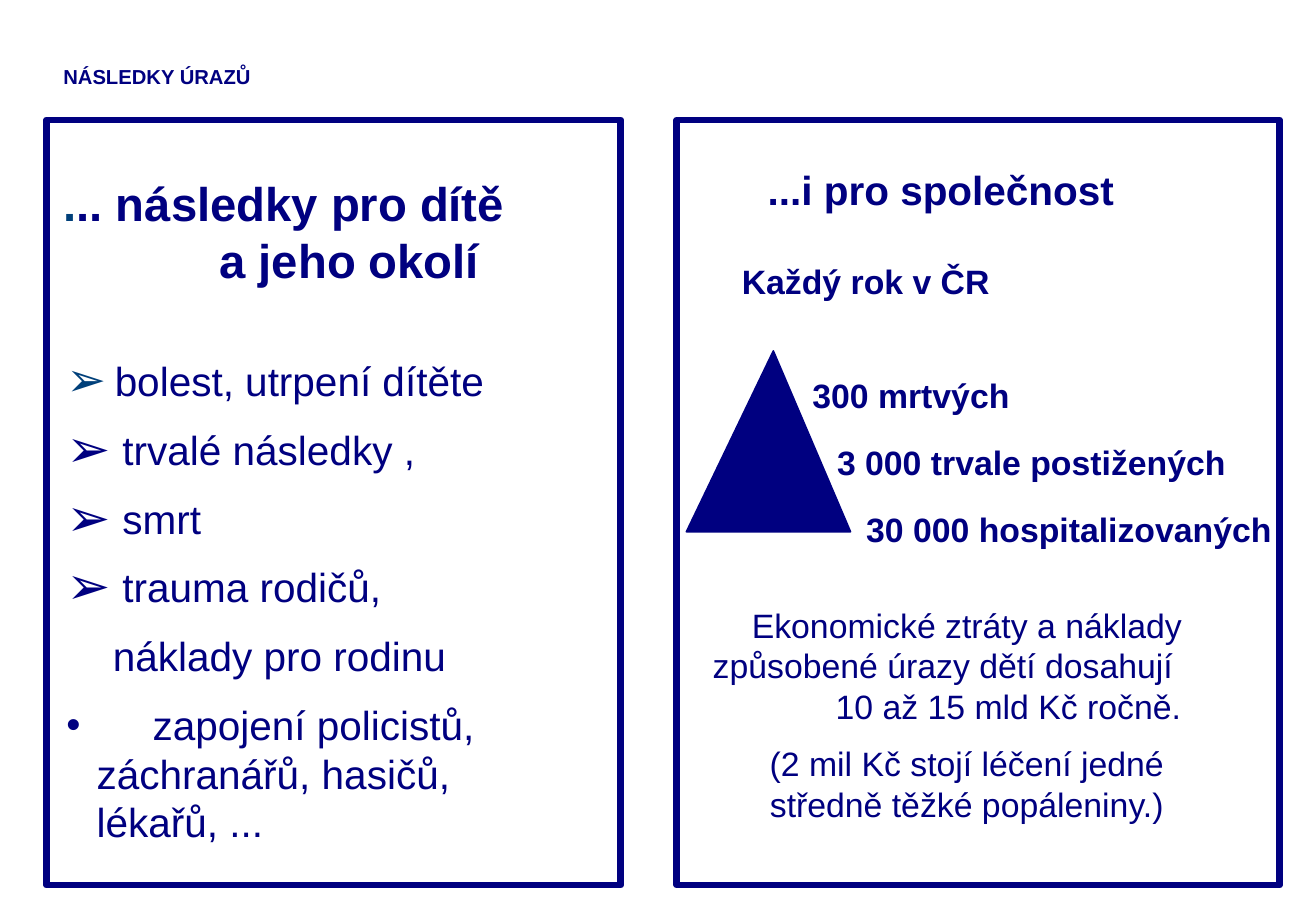
from dataclasses import dataclass
from lxml import etree
from pptx import Presentation
from pptx.dml.color import RGBColor
from pptx.enum.shapes import MSO_SHAPE
from pptx.enum.text import MSO_ANCHOR, PP_ALIGN
from pptx.oxml.ns import qn
from pptx.util import Cm, Pt

LEFT = PP_ALIGN.LEFT
CENTER = PP_ALIGN.CENTER
MIDDLE = MSO_ANCHOR.MIDDLE
RECTANGLE = MSO_SHAPE.RECTANGLE
TRIANGLE = MSO_SHAPE.ISOSCELES_TRIANGLE
TITLE_ONLY = 5


@dataclass(frozen=True)
class Theme:
    font: str = "Arial"
    navy: RGBColor = RGBColor(0x00, 0x00, 0x80)
    teal: RGBColor = RGBColor(0x00, 0x40, 0x7A)
    title: int = 12
    body: int = 20
    large: int = 24
    heading: int = 28
    frame: int = 4


THEME = Theme()


@dataclass(frozen=True)
class Box:
    left: float
    top: float
    width: float
    height: float

    def inner(self, left, top, width, height):
        return Box(self.left + left, self.top + top, width, height)

    def lengths(self):
        return [Cm(n) for n in (self.left, self.top, self.width, self.height)]


@dataclass(frozen=True)
class Line:
    text: str
    align: PP_ALIGN = LEFT
    before: float = 0
    margin: float = 0
    bullet: str = ""
    bullet_size: int = 100
    bullet_color: RGBColor = THEME.navy
    lead: str = ""


def add_span(para, text, size, bold, color=THEME.navy):
    span = para.add_run()
    span.text = text
    span.font.name = THEME.font
    span.font.size = Pt(size)
    span.font.bold = bold
    span.font.color.rgb = color


def set_indent(para, line):
    properties = para._p.get_or_add_pPr()
    properties.set("marL", str(Cm(line.margin)))
    properties.set("indent", str(-Cm(line.margin) if line.bullet else 0))
    if line.bullet:
        color = etree.SubElement(properties, qn("a:buClr"))
        etree.SubElement(color, qn("a:srgbClr"), val=str(line.bullet_color))
        etree.SubElement(properties, qn("a:buSzPct"), val=str(line.bullet_size * 1000))
        etree.SubElement(properties, qn("a:buFont"), typeface=THEME.font)
        etree.SubElement(properties, qn("a:buChar"), char=line.bullet)


def add_text(page, box, lines, size, bold=False):
    frame = page.shapes.add_textbox(*box.lengths()).text_frame
    frame.word_wrap = True
    for index, line in enumerate(lines):
        para = frame.add_paragraph() if index else frame.paragraphs[0]
        set_indent(para, line)
        para.alignment = line.align
        para.space_before = Pt(line.before)
        if line.lead:
            add_span(para, line.lead, size, bold, THEME.teal)
        for row, text in enumerate(line.text.split("\n")):
            if row:
                para.add_line_break()
            add_span(para, text, size, bold)


def add_frame(page, box):
    frame = page.shapes.add_shape(RECTANGLE, *box.lengths())
    frame.shadow.inherit = False
    frame.fill.background()
    frame.line.color.rgb = THEME.navy
    frame.line.width = Pt(THEME.frame)


def add_title(page, box, text):
    title = page.shapes.title
    title.left, title.top, title.width, title.height = box.lengths()
    title.text_frame.vertical_anchor = MIDDLE
    para = title.text_frame.paragraphs[0]
    para.alignment = LEFT
    add_span(para, text, THEME.title, True)


def add_child_panel(page, box):
    add_frame(page, box)
    add_text(page, box.inner(0.11, 1.02, 11.3, 2.62), [
        Line(".. následky pro dítě", lead="."),
        Line("a jeho okolí", margin=3.26),
    ], THEME.heading, True)
    gap = THEME.large / 2
    arrow = {"before": gap, "margin": 1.17, "bullet": "➢", "bullet_size": 130}
    add_text(page, box.inner(0.17, 4.81, 11.81, 9.88), [
        Line("bolest, utrpení dítěte", margin=1.01, bullet="➢",
             bullet_size=117, bullet_color=THEME.teal),
        Line("trvalé následky ,", **arrow),
        Line("smrt", **arrow),
        Line("trauma rodičů,", **arrow),
        Line("náklady pro rodinu", before=gap, margin=0.97),
        Line("zapojení policistů,", before=gap, margin=1.8, bullet="•"),
        Line("záchranářů, hasičů,\nlékařů, ...", margin=0.63),
    ], THEME.large)


def add_society_panel(page, box):
    add_frame(page, box)
    add_text(page, box.inner(1.29, 0.81, 8.46, 1.27),
             [Line("...i pro společnost", CENTER)], THEME.large, True)
    add_text(page, box.inner(0.99, 2.82, 5.92, 1.09),
             [Line("Každý rok v ČR", CENTER)], THEME.body, True)

    pyramid = page.shapes.add_shape(TRIANGLE, *box.inner(0.2, 4.83, 3.43, 3.78).lengths())
    pyramid.adjustments[0] = 0.53
    pyramid.shadow.inherit = False
    pyramid.fill.solid()
    pyramid.fill.fore_color.rgb = THEME.navy
    pyramid.line.color.rgb = THEME.navy
    pyramid.line.width = Pt(1)

    facts = [
        ("300 mrtvých", 1.39, 7.01),
        ("3 000 trvale postižených", 2.82, 9.19),
        ("30 000 hospitalizovaných", 3.12, 10.16),
    ]
    for index, (text, left, width) in enumerate(facts):
        add_text(page, box.inner(left, 5.21 + 1.4 * index, width, 1.09),
                 [Line(text, CENTER)], THEME.body, True)

    add_text(page, box.inner(0.45, 10.01, 11.23, 4.9), [
        Line("Ekonomické ztráty a náklady", CENTER),
        Line("způsobené úrazy dětí dosahují", margin=0.05),
        Line("10 až 15 mld Kč ročně.", margin=2.62),
        Line("(2 mil Kč stojí léčení jedné\nstředně těžké popáleniny.)",
             CENTER, before=THEME.body / 2),
    ], THEME.body)


def main():
    deck = Presentation()
    deck.slide_width, deck.slide_height = Cm(27.51), Cm(19.05)
    page = deck.slides.add_slide(deck.slide_layouts[TITLE_ONLY])
    add_title(page, Box(1.07, 1.07, 25, 1.07), "NÁSLEDKY ÚRAZŮ")
    add_child_panel(page, Box(0.97, 2.51, 12.01, 16))
    add_society_panel(page, Box(14.15, 2.51, 12.6, 16))
    deck.save("out.pptx")


if __name__ == "__main__":
    main()
